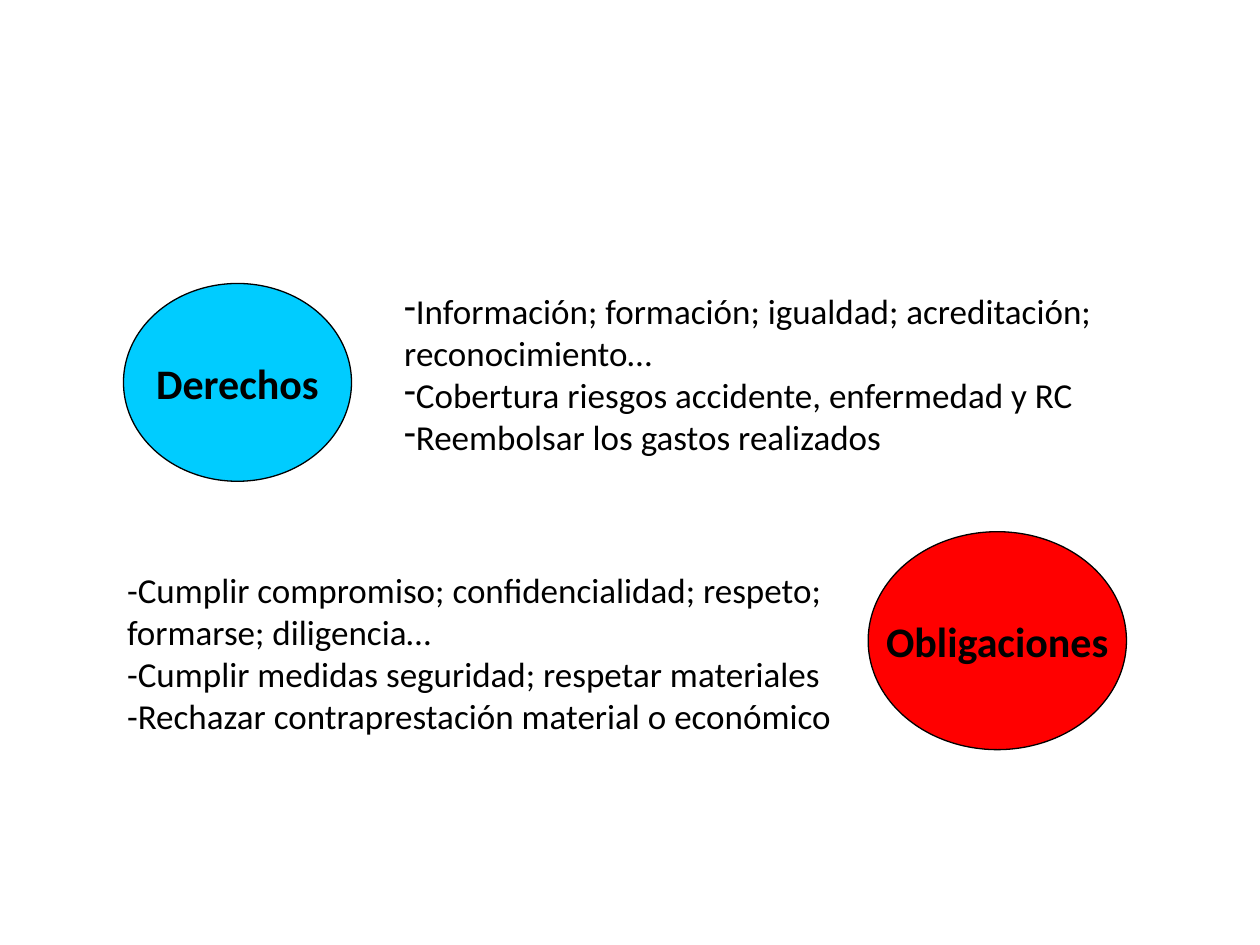
import pptx
import pptx.dml.color
import pptx.enum.shapes
import pptx.enum.text
import pptx.oxml.ns
import pptx.util
import lxml.etree

Inches = pptx.util.Inches


def color(value):
    return pptx.dml.color.RGBColor.from_string(value)


class SlideBuilder:
    """Hold the style and the current slide, and add its elements."""

    font_name = "Calibri"
    ink = "000000"
    body_size = 20
    label_size = 24

    def __init__(self, slide):
        self.slide = slide

    def add_text(self, paragraph, text, size, bold=False):
        run = paragraph.add_run()
        run.text = text
        run.font.name = self.font_name
        run.font.size = pptx.util.Pt(size)
        run.font.bold = bold
        run.font.color.rgb = color(self.ink)

    def add_dash(self, paragraph):
        properties = paragraph._p.get_or_add_pPr()
        properties.set("marL", "0")
        properties.set("indent", "0")
        lxml.etree.SubElement(properties, pptx.oxml.ns.qn("a:buFontTx"))
        bullet = lxml.etree.SubElement(properties, pptx.oxml.ns.qn("a:buChar"))
        bullet.set("char", "-")

    def add_list(self, left, top, width, height, items, bulleted=False):
        box = self.slide.shapes.add_textbox(
            Inches(left), Inches(top), Inches(width), Inches(height))
        frame = box.text_frame
        frame.word_wrap = True
        frame.auto_size = pptx.enum.text.MSO_AUTO_SIZE.SHAPE_TO_FIT_TEXT
        for index, item in enumerate(items):
            paragraph = frame.add_paragraph() if index else frame.paragraphs[0]
            if bulleted:
                self.add_dash(paragraph)
            self.add_text(paragraph, item, self.body_size)

    def add_ellipse(self, left, top, width, height, fill, label):
        shape = self.slide.shapes.add_shape(
            pptx.enum.shapes.MSO_SHAPE.OVAL,
            Inches(left), Inches(top), Inches(width), Inches(height))
        shape.shadow.inherit = False
        shape.fill.solid()
        shape.fill.fore_color.rgb = color(fill)
        shape.line.color.rgb = color(self.ink)
        shape.line.width = pptx.util.Pt(0.75)
        frame = shape.text_frame
        frame.word_wrap = False
        frame.vertical_anchor = pptx.enum.text.MSO_ANCHOR.MIDDLE
        paragraph = frame.paragraphs[0]
        paragraph.alignment = pptx.enum.text.PP_ALIGN.CENTER
        self.add_text(paragraph, label, self.label_size, bold=True)


def main():
    presentation = pptx.Presentation()
    presentation.slide_width = Inches(10)
    presentation.slide_height = Inches(7.5)
    builder = SlideBuilder(
        presentation.slides.add_slide(presentation.slide_layouts[6]))

    builder.add_list(3.11, 2.25, 6.69, 1.43, [
        "Información; formación; igualdad; acreditación; reconocimiento…",
        "Cobertura riesgos accidente, enfermedad y RC",
        "Reembolsar los gastos realizados",
    ], bulleted=True)
    builder.add_ellipse(0.98, 2.25, 1.81, 1.57, "00CCFF", "Derechos")
    builder.add_ellipse(6.89, 4.22, 2.05, 1.73, "FF0000", "Obligaciones")
    builder.add_list(0.91, 4.46, 6.22, 1.43, [
        "-Cumplir compromiso; confidencialidad; respeto; formarse; diligencia…",
        "-Cumplir medidas seguridad; respetar materiales",
        "-Rechazar contraprestación material o económico",
    ])
    presentation.save("out.pptx")


if __name__ == "__main__":
    main()
